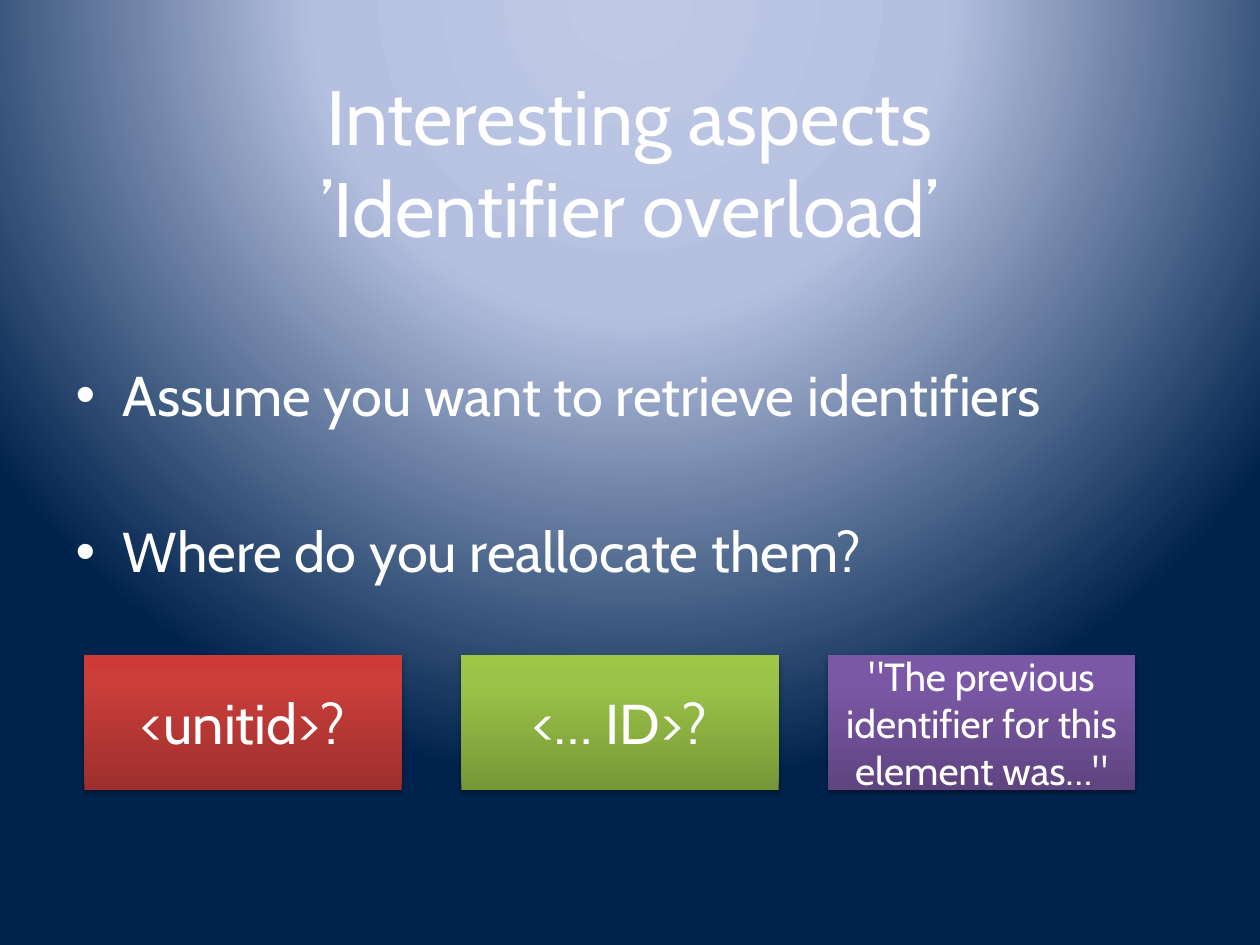
from dataclasses import dataclass

from lxml import etree
from pptx import Presentation
from pptx.dml.color import RGBColor
from pptx.enum.shapes import MSO_SHAPE
from pptx.enum.text import MSO_ANCHOR, MSO_AUTO_SIZE, PP_ALIGN
from pptx.oxml import parse_xml
from pptx.oxml.ns import nsdecls
from pptx.util import Cm, Pt

RECTANGLE = MSO_SHAPE.RECTANGLE
MIDDLE = MSO_ANCHOR.MIDDLE
NO_FIT = MSO_AUTO_SIZE.NONE
CENTER = PP_ALIGN.CENTER
LEFT = PP_ALIGN.LEFT

FONT = "Cabin"
WHITE = "FFFFFF"
CARD_TOP = 13.21
CARD_HEIGHT = 2.71
CARD_STOPS = (0, 80, 100)
BACKGROUND_STOPS = ((0, "BFC9E5"), (40, "B5C0E0"), (100, "00234D"))
LINEAR_UP = '<a:lin ang="16200000" scaled="0"/>'
CIRCLE_FROM_TOP = (
    '<a:path path="circle">'
    '<a:fillToRect l="50000" t="-80000" r="50000" b="180000"/></a:path>'
)


@dataclass
class Card:
    text: str
    left: float
    width: float
    size: float
    shades: tuple[str, str, str]


CARDS = (
    Card("<unitid>?", 1.7, 6.4, 32, ("9C2F2D", "CB3E3A", "CE3B37")),
    Card("<… ID>?", 9.3, 6.4, 32, ("779737", "9BC348", "9DC746")),
    Card('"The previous identifier for this element was…"', 16.69, 6.2, 22.4,
         ("5F4480", "7B58A6", "7C57A8")),
)


def color(value: str) -> RGBColor:
    return RGBColor.from_string(value)


def set_gradient(fill, owner, stops, direction: str) -> None:
    """Give the fill found inside the owner element any number of stops."""
    fill.gradient()
    old = owner.xpath(".//a:gradFill")[0]
    stop_xml = "".join(
        f'<a:gs pos="{position * 1000}"><a:srgbClr val="{shade}"/></a:gs>'
        for position, shade in stops
    )
    new = parse_xml(
        f'<a:gradFill {nsdecls("a")} rotWithShape="1">'
        f"<a:gsLst>{stop_xml}</a:gsLst>{direction}</a:gradFill>"
    )
    old.getparent().replace(old, new)


def add_shadow(shape) -> None:
    shape.shadow.inherit = False
    effects = shape.element.xpath("./p:spPr/a:effectLst")[0]
    shadow = parse_xml(
        f'<a:outerShdw {nsdecls("a")} blurRad="{Pt(3.1)}" dist="{Pt(1.8)}" '
        'dir="5400000" rotWithShape="0"/>'
    )
    tint = etree.SubElement(shadow, shadow.nsmap["a"].join("{}") + "srgbClr", val="000000")
    etree.SubElement(tint, shadow.nsmap["a"].join("{}") + "alpha", val="35000")
    effects.append(shadow)


def place(shape, left: float, top: float, width: float, height: float) -> None:
    shape.left, shape.top = Cm(left), Cm(top)
    shape.width, shape.height = Cm(width), Cm(height)


def write(frame, *lines: str, size: float, align=LEFT, gap: float = 0) -> None:
    """Write one paragraph per line, with the gap in points between them."""
    frame.word_wrap = True
    frame.auto_size = NO_FIT
    for index, line in enumerate(lines):
        para = frame.add_paragraph() if index else frame.paragraphs[0]
        para.text = line
        para.alignment = align
        para.space_before = Pt(gap if index else 0)
        para.font.name = FONT
        para.font.size = Pt(size)
        para.font.color.rgb = color(WHITE)


def add_card(slide, card: Card) -> None:
    box = slide.shapes.add_shape(RECTANGLE, Cm(card.left), Cm(CARD_TOP),
                                 Cm(card.width), Cm(CARD_HEIGHT))
    set_gradient(box.fill, box.element, zip(CARD_STOPS, card.shades), LINEAR_UP)
    box.line.fill.background()
    add_shadow(box)
    box.text_frame.vertical_anchor = MIDDLE
    write(box.text_frame, card.text, size=card.size, align=CENTER)


def main() -> None:
    deck = Presentation()
    deck.slide_width, deck.slide_height = Cm(25.4), Cm(19.05)
    page = deck.slides.add_slide(deck.slide_layouts[1])
    set_gradient(page.background.fill, page.element, BACKGROUND_STOPS, CIRCLE_FROM_TOP)

    title, body = page.placeholders
    place(title, 0.3, 0.76, 24.8, 4.95)
    title.text_frame.vertical_anchor = MIDDLE
    write(title.text_frame, "Interesting aspects\v’Identifier overload’",
          size=44, align=CENTER)

    place(body, 1.27, 7.14, 22.43, 5.41)
    write(body.text_frame, "Assume you want to retrieve identifiers",
          "Where do you reallocate them?", size=32, gap=51)

    for card in CARDS:
        add_card(page, card)
    deck.save("out.pptx")


if __name__ == "__main__":
    main()
